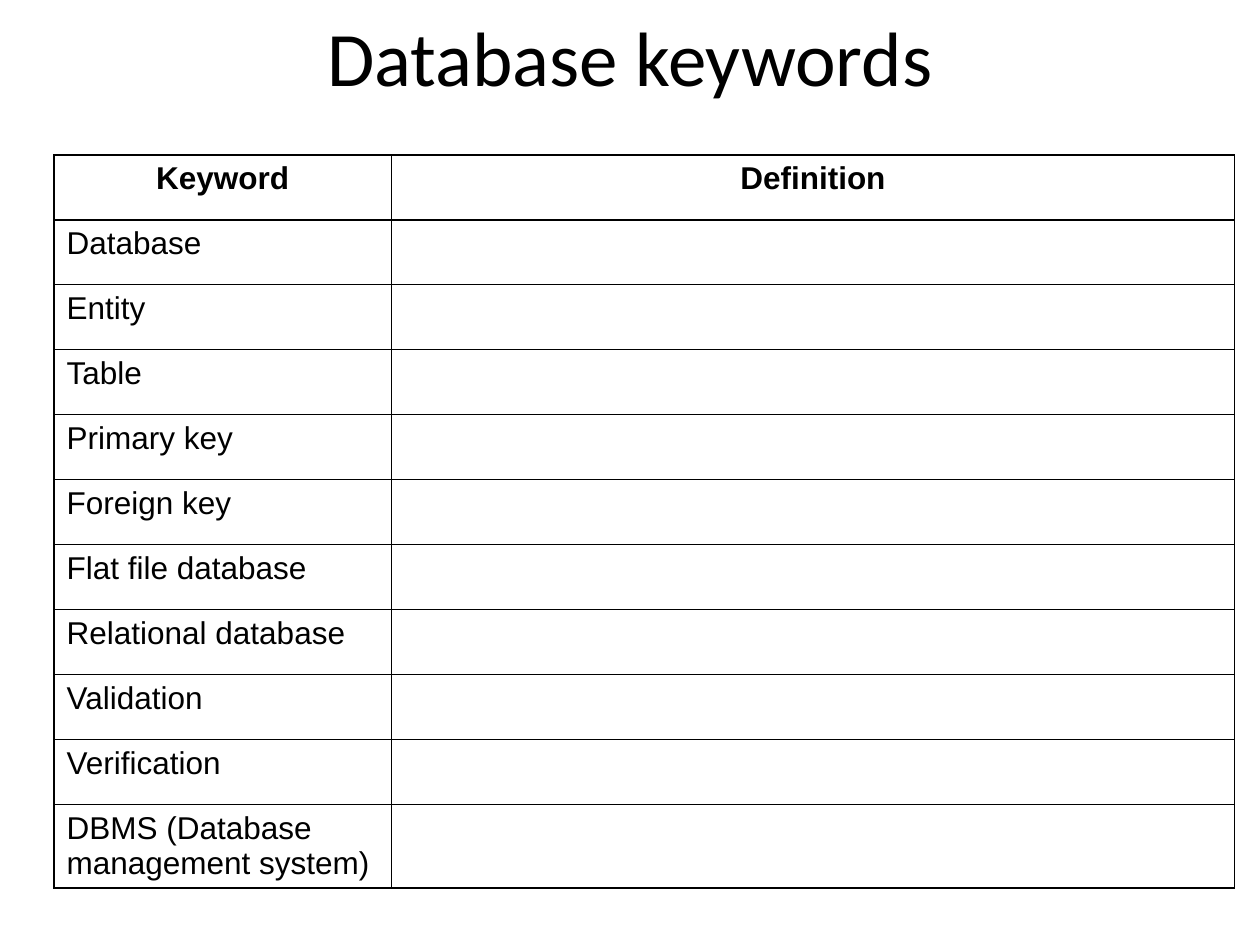
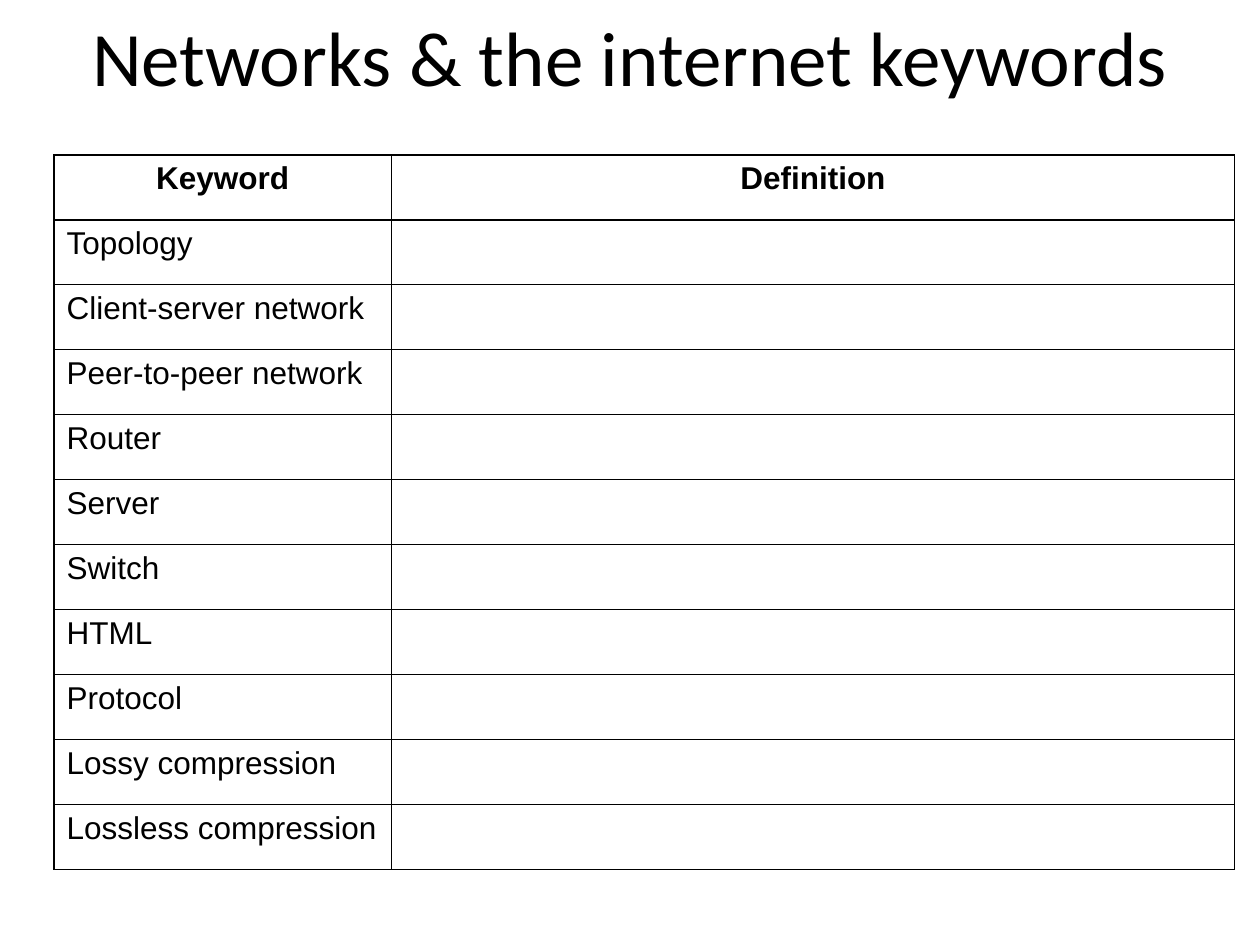
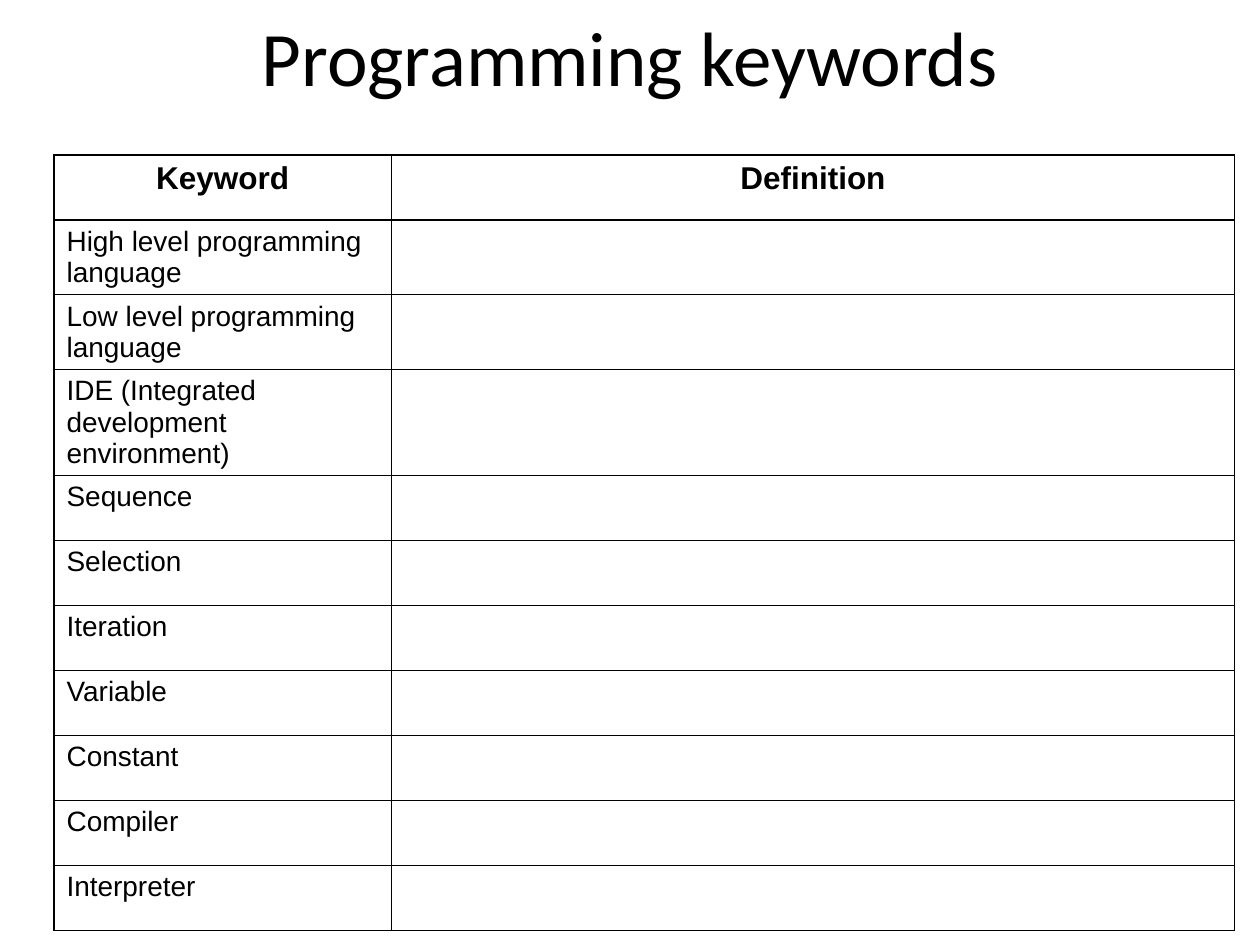
from lxml import etree
from pptx import Presentation
from pptx.dml.color import RGBColor
from pptx.enum.text import MSO_ANCHOR, PP_ALIGN
from pptx.oxml.ns import qn
from pptx.util import Cm, Pt

LEFT, CENTER = PP_ALIGN.LEFT, PP_ALIGN.CENTER
MIDDLE = MSO_ANCHOR.MIDDLE

BLACK = "000000"
TITLE_FONT, TABLE_FONT = "Calibri", "Arial"
TITLE_ONLY = 5
TITLE_BOX = (Cm(1.27), Cm(0.13), Cm(22.86), Cm(2))
TABLE_LEFT, TABLE_TOP = Cm(1.09), Cm(3.12)
COLUMN_WIDTHS = (Cm(6.8), Cm(17))
ROW_HEIGHT = Cm(1.31)
BORDER_WIDTH = Pt(1)
HEADER_SIZE = 18

HEADERS = ("Keyword", "Definition")
PAGES = [
    {
        "title": "Database keywords",
        "size": 18,
        "keywords": [
            "Database", "Entity", "Table", "Primary key", "Foreign key",
            "Flat file database", "Relational database", "Validation",
            "Verification", "DBMS (Database management system)",
        ],
    },
    {
        "title": "Networks & the internet keywords",
        "size": 18,
        "keywords": [
            "Topology", "Client-server network", "Peer-to-peer network",
            "Router", "Server", "Switch", "HTML", "Protocol",
            "Lossy compression", "Lossless compression",
        ],
    },
    {
        "title": "Programming keywords",
        "size": 16,
        "keywords": [
            "High level programming language",
            "Low level programming language",
            "IDE (Integrated development environment)",
            "Sequence", "Selection", "Iteration", "Variable", "Constant",
            "Compiler", "Interpreter",
        ],
    },
]


def color(value):
    return RGBColor.from_string(value)


def write(frame, text, font=TABLE_FONT, size=18, bold=False, align=LEFT):
    para = frame.paragraphs[0]
    para.alignment = align
    span = para.add_run()
    span.text = text
    span.font.name = font
    span.font.size = Pt(size)
    span.font.bold = bold
    span.font.color.rgb = color(BLACK)


def add_borders(cell):
    """Outline all four sides; the schema wants the lines before the fill."""
    properties = cell._tc.get_or_add_tcPr()
    for index, side in enumerate(("a:lnL", "a:lnR", "a:lnT", "a:lnB")):
        line = etree.Element(qn(side), w=str(BORDER_WIDTH))
        fill = etree.SubElement(line, qn("a:solidFill"))
        etree.SubElement(fill, qn("a:srgbClr"), val=BLACK)
        properties.insert(index, line)


def add_title(page, text):
    title = page.shapes.title
    title.left, title.top, title.width, title.height = TITLE_BOX
    title.text_frame.vertical_anchor = MIDDLE
    write(title.text_frame, text, font=TITLE_FONT, size=44, align=CENTER)


def add_keyword_table(page, keywords, size):
    row_count = len(keywords) + 1
    table = page.shapes.add_table(
        row_count, len(HEADERS), TABLE_LEFT, TABLE_TOP,
        sum(COLUMN_WIDTHS), ROW_HEIGHT * row_count,
    ).table
    table.first_row = table.horz_banding = False
    for column, width in zip(table.columns, COLUMN_WIDTHS):
        column.width = width
    for row in table.rows:
        row.height = ROW_HEIGHT
    for cell in table.iter_cells():
        cell.fill.background()
        add_borders(cell)
    for index, header in enumerate(HEADERS):
        write(table.cell(0, index).text_frame, header,
              size=HEADER_SIZE, bold=True, align=CENTER)
    for index, keyword in enumerate(keywords, start=1):
        write(table.cell(index, 0).text_frame, keyword, size=size)


def main():
    deck = Presentation()
    deck.slide_width, deck.slide_height = Cm(25.4), Cm(19.05)
    for content in PAGES:
        page = deck.slides.add_slide(deck.slide_layouts[TITLE_ONLY])
        add_title(page, content["title"])
        add_keyword_table(page, content["keywords"], content["size"])
    deck.save("out.pptx")


if __name__ == "__main__":
    main()
